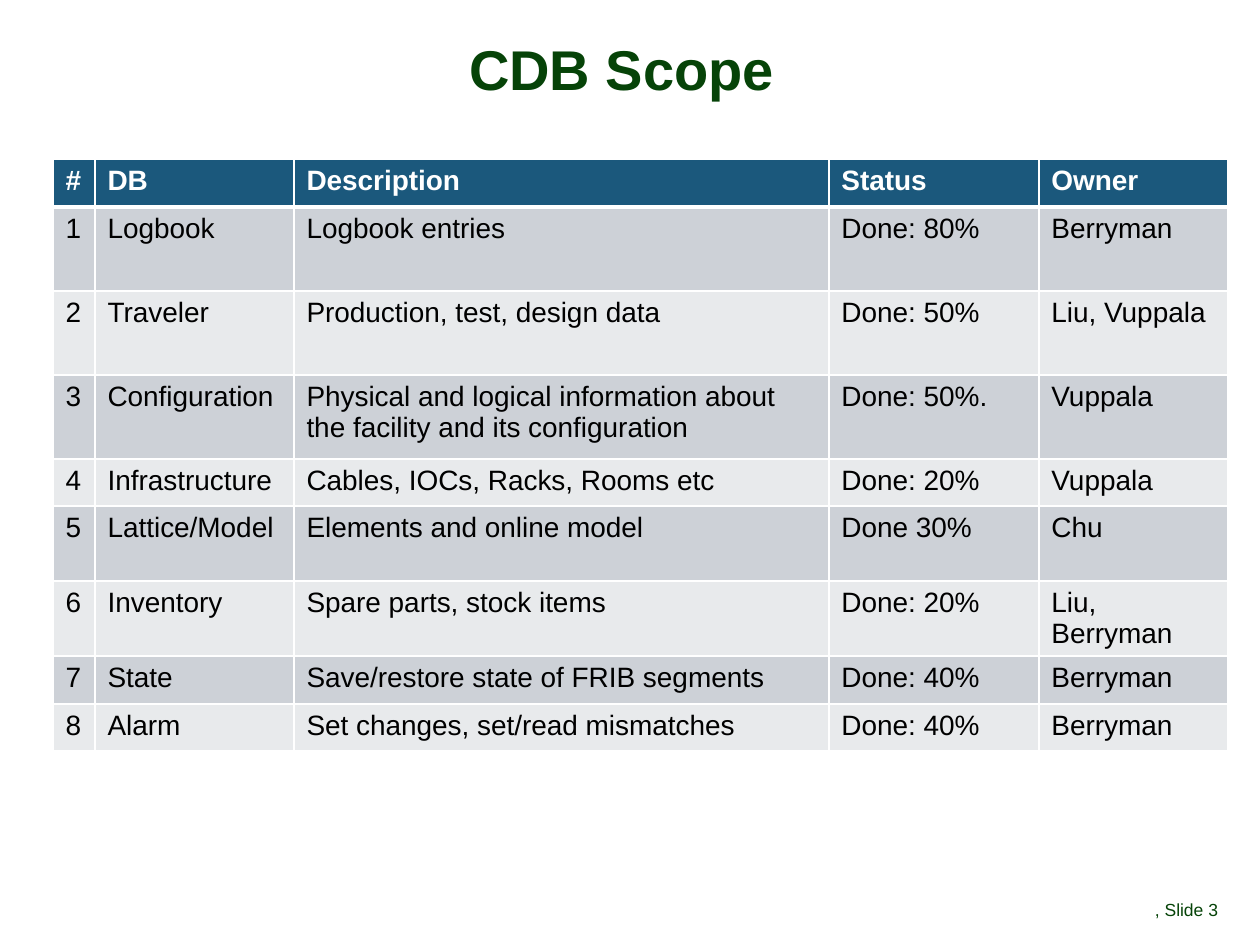
import pptx
import pptx.util
import pptx.dml.color
import pptx.enum.text
import pptx.oxml.ns
import lxml.etree

RGBColor = pptx.dml.color.RGBColor
ALIGN = pptx.enum.text.PP_ALIGN
ANCHOR = pptx.enum.text.MSO_ANCHOR

PX = 914400 // 126
FONT = "Arial"
WHITE = RGBColor(0xFF, 0xFF, 0xFF)
BLACK = RGBColor(0, 0, 0)
GREEN = RGBColor(0x06, 0x43, 0x08)
HEADER_BLUE = RGBColor(0x1B, 0x58, 0x7C)
BANDS = (RGBColor(0xE8, 0xEA, 0xEC), RGBColor(0xCD, 0xD1, 0xD7))

COLUMN_WIDTHS = (42, 199, 535, 210, 189)
ROW_HEIGHTS = (48, 84, 84, 84, 47, 75, 75, 48, 47)
HEADER = ("#", "DB", "Description", "Status", "Owner")
DATABASES = (
    ("Logbook", "Logbook entries", "Done: 80%", "Berryman"),
    ("Traveler", "Production, test, design data", "Done: 50%", "Liu, Vuppala"),
    ("Configuration",
     "Physical and logical information about the facility and its configuration",
     "Done: 50%.", "Vuppala"),
    ("Infrastructure", "Cables, IOCs, Racks, Rooms etc", "Done: 20%", "Vuppala"),
    ("Lattice/Model", "Elements and online model", "Done 30%", "Chu"),
    ("Inventory", "Spare parts, stock items", "Done: 20%", "Liu, Berryman"),
    ("State", "Save/restore state of FRIB segments", "Done: 40%", "Berryman"),
    ("Alarm", "Set changes, set/read mismatches", "Done: 40%", "Berryman"),
)


def px(length):
    return pptx.util.Emu(length * PX)


def format_text(para, size, color, bold=False):
    for span in para.runs:
        span.font.name = FONT
        span.font.size = pptx.util.Pt(size)
        span.font.bold = bold
        span.font.color.rgb = color


def add_text(page, place, text, size, bold, align, anchor, insets, spacing):
    box = page.shapes.add_textbox(*map(px, place))
    frame = box.text_frame
    frame.word_wrap = True
    frame.vertical_anchor = anchor
    frame.margin_left = frame.margin_right = px(insets[0])
    frame.margin_top = frame.margin_bottom = px(insets[1])
    frame.text = text
    para = frame.paragraphs[0]
    para.alignment = align
    para.line_spacing = spacing
    format_text(para, size, GREEN, bold)


def set_borders(cell, top, bottom):
    properties = cell._tc.get_or_add_tcPr()
    for side, width in (("L", 1), ("R", 1), ("T", top), ("B", bottom)):
        line = lxml.etree.SubElement(properties, pptx.oxml.ns.qn("a:ln" + side),
                                     w=str(pptx.util.Pt(width)))
        fill = lxml.etree.SubElement(line, pptx.oxml.ns.qn("a:solidFill"))
        lxml.etree.SubElement(fill, pptx.oxml.ns.qn("a:srgbClr"), val=str(WHITE))


def fill_cell(cell, text, row):
    is_header = row == 0
    set_borders(cell, 3 if row == 1 else 1, 3 if is_header else 1)
    cell.fill.solid()
    cell.fill.fore_color.rgb = HEADER_BLUE if is_header else BANDS[row % 2]
    cell.text_frame.text = text
    format_text(cell.text_frame.paragraphs[0], 16,
                WHITE if is_header else BLACK, is_header)


def add_scope_table(page):
    rows = [HEADER] + [(str(number), *entry)
                       for number, entry in enumerate(DATABASES, 1)]
    table = page.shapes.add_table(
        len(rows), len(HEADER), px(53), px(159),
        px(sum(COLUMN_WIDTHS)), px(sum(ROW_HEIGHTS))).table
    for column, width in zip(table.columns, COLUMN_WIDTHS):
        column.width = px(width)
    for row, (height, texts) in enumerate(zip(ROW_HEIGHTS, rows)):
        table.rows[row].height = px(height)
        for column, text in enumerate(texts):
            fill_cell(table.cell(row, column), text, row)


def main():
    deck = pptx.Presentation()
    deck.slide_width = px(1260)
    deck.slide_height = px(945)
    page = deck.slides.add_slide(deck.slide_layouts[6])
    add_scope_table(page)
    add_text(page, (10, 39, 1239, 67), "CDB Scope ", 32, True,
             ALIGN.CENTER, ANCHOR.MIDDLE, (8, 3), 0.88)
    add_text(page, (1155, 876, 105, 50), ", Slide 3", 10, False,
             ALIGN.LEFT, ANCHOR.BOTTOM, (0, 6), 0.9)
    deck.save("out.pptx")


if __name__ == "__main__":
    main()
